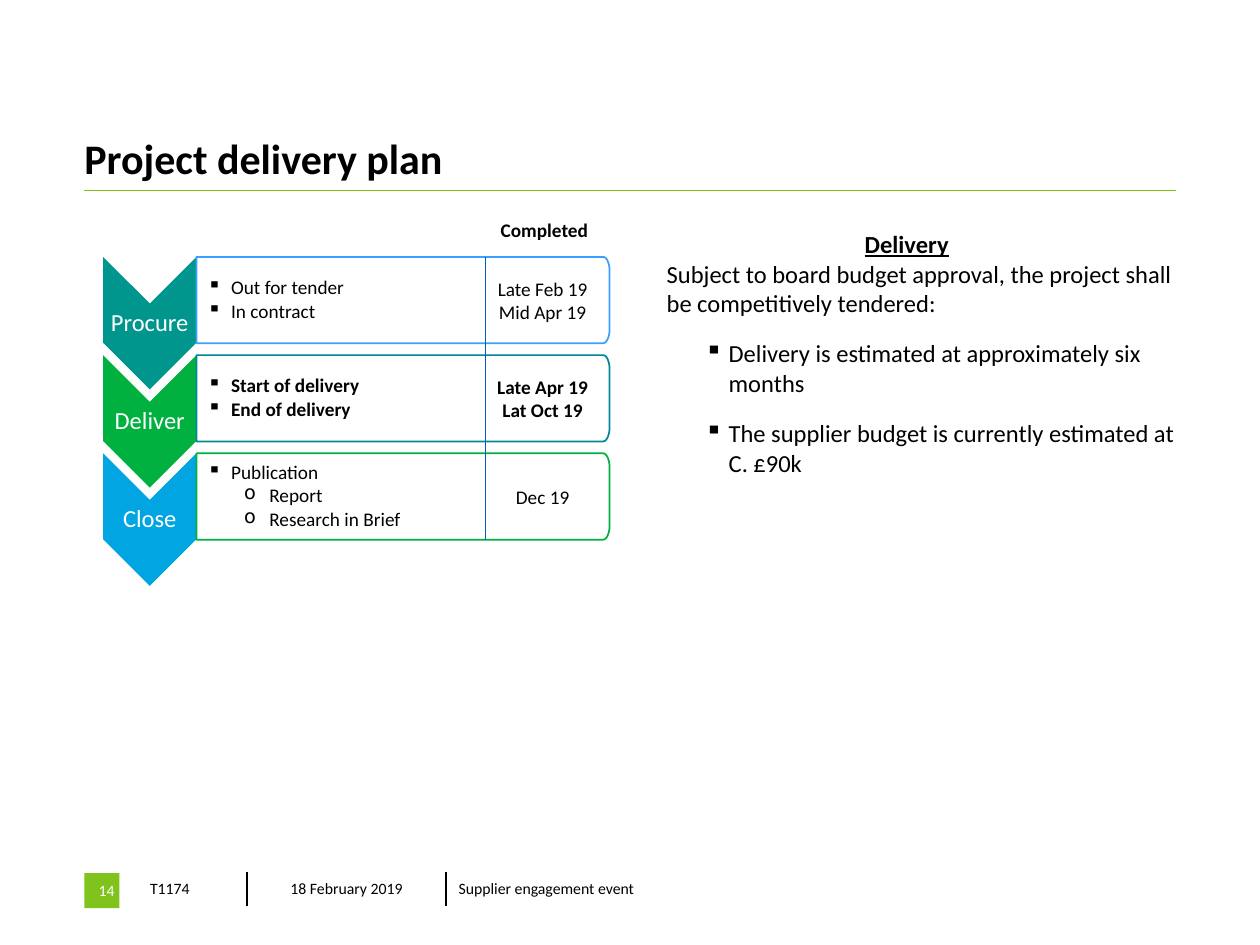
import math

from lxml import etree
from pptx import Presentation
from pptx import util as u
from pptx.dml import color
from pptx.enum import shapes, text
from pptx.oxml import ns

Cm, Pt = u.Cm, u.Pt
BLACK = color.RGBColor(0x00, 0x00, 0x00)
WHITE = color.RGBColor(0xFF, 0xFF, 0xFF)
LIME = color.RGBColor(0x7F, 0xC3, 0x1C)
GREEN = color.RGBColor(0x00, 0xB1, 0x40)
TEAL = color.RGBColor(0x00, 0x96, 0x8E)
DARK_TEAL = color.RGBColor(0x00, 0x87, 0x9B)
SKY = color.RGBColor(0x00, 0xA5, 0xE1)
BLUE = color.RGBColor(0x3B, 0x9F, 0xFF)
NAVY = color.RGBColor(0x00, 0x5E, 0xB8)

SQUARE = ("▪", 0.48, -0.48)
CIRCLE = ("o", 1.25, -0.51)
BODY_SQUARE = ("▪", 1.25, -0.48)
STAGES = [
    ("Procure", TEAL, BLUE, False,
     [("Out for tender", SQUARE), ("In contract", SQUARE)],
     ["Late Feb 19", "Mid Apr 19"]),
    ("Deliver", GREEN, DARK_TEAL, True,
     [("Start of delivery", SQUARE), ("End of delivery", SQUARE)],
     ["Late Apr 19", "Lat Oct 19"]),
    ("Close", SKY, GREEN, False,
     [("Publication", SQUARE), ("Report", CIRCLE), ("Research in Brief", CIRCLE)],
     ["Dec 19"]),
]
DELIVERY = [
    ("Delivery", ("", 3.99, 0), 0, {"bold": True, "underline": True}),
    ("Subject to board budget approval, the project shall be competitively tendered:",
     None, 12, {}),
    ("Delivery is estimated at approximately six months", BODY_SQUARE, 12, {}),
    ("The supplier budget is currently estimated at C. £90k", BODY_SQUARE, 12, {}),
]
FOOTER = [
    ("T1174", 2.21, text.PP_ALIGN.LEFT, ["R"]),
    ("18 February 2019", 4.01, text.PP_ALIGN.CENTER, ["L", "R"]),
    ("Supplier engagement event", 5.41, text.PP_ALIGN.LEFT, ["L"]),
]

STAGE_TOP, STAGE_STEP = 5.18, 1.98
CHEVRON_LEFT, CHEVRON_WIDTH, CHEVRON_HEIGHT, NOTCH = 2.08, 1.88, 2.67, 0.94
PANEL_LEFT, PANEL_WIDTH, PANEL_HEIGHT = 3.96, 8.33, 1.74
CORNER_WIDTH, CORNER_HEIGHT = 0.13, 0.29
DATE_LEFT, DATE_WIDTH = 9.76, 2.36


def apply(target, values):
    for name, value in values.items():
        setattr(target, name, value)


def set_indent(paragraph, indent):
    bullet, margin, first = indent
    properties = paragraph._p.get_or_add_pPr()
    properties.set("marL", str(Cm(margin)))
    properties.set("indent", str(Cm(first)))
    if bullet:
        etree.SubElement(properties, ns.qn("a:buChar")).set("char", bullet)


def write(paragraph, wording, size, rgb=BLACK, indent=None, style=None, **layout):
    if indent:
        set_indent(paragraph, indent)
    paragraph.text = wording
    apply(paragraph, layout)
    apply(paragraph.font, {"name": "Calibri", "size": Pt(size), **(style or {})})
    paragraph.font.color.rgb = rgb


def paragraphs(frame, items):
    for number, item in enumerate(items):
        yield (frame.add_paragraph() if number else frame.paragraphs[0]), item


def set_frame(shape, margins, anchor=text.MSO_ANCHOR.MIDDLE, wrap=True):
    frame = shape.text_frame
    sides = ("margin_left", "margin_top", "margin_right", "margin_bottom")
    apply(frame, {"word_wrap": wrap, "vertical_anchor": anchor,
                  **{side: Cm(value) for side, value in zip(sides, margins)}})
    return frame


def add_text(slide, box, anchor, wrap=True):
    shape = slide.shapes.add_textbox(*map(Cm, box))
    return set_frame(shape, (0, 0, 0, 0), anchor, wrap)


def paint(shape, fill, line=None):
    shape.shadow.inherit = False
    shape.fill.solid()
    shape.fill.fore_color.rgb = fill
    if line is None:
        shape.line.fill.background()
    else:
        shape.line.color.rgb = line
        shape.line.width = Pt(1)


def add_outline(slide, points):
    corners = [(Cm(x), Cm(y)) for x, y in points]
    builder = slide.shapes.build_freeform(*corners[0])
    builder.add_line_segments(corners[1:], close=True)
    return builder.convert_to_shape()


def add_rule(slide, start, end, rgb, width):
    line = slide.shapes.add_connector(shapes.MSO_CONNECTOR.STRAIGHT,
                                      *map(Cm, start + end))
    line.line.color.rgb = rgb
    line.line.width = Pt(width)
    etree.SubElement(line._element.spPr, ns.qn("a:effectLst"))


def chevron_points(top):
    left, right = CHEVRON_LEFT, CHEVRON_LEFT + CHEVRON_WIDTH
    middle, bottom = left + CHEVRON_WIDTH / 2, top + CHEVRON_HEIGHT
    return [(right, top), (right, bottom - NOTCH), (middle, bottom),
            (left, bottom - NOTCH), (left, top), (middle, top + NOTCH)]


def panel_points(top):
    x = PANEL_LEFT + PANEL_WIDTH - CORNER_WIDTH
    upper, lower = top + CORNER_HEIGHT, top + PANEL_HEIGHT - CORNER_HEIGHT
    angles = [math.radians(degrees) for degrees in range(0, 91, 10)]
    arc = [(x + CORNER_WIDTH * math.sin(a), CORNER_HEIGHT * math.cos(a)) for a in angles]
    return ([(PANEL_LEFT, top)] + [(px, upper - dy) for px, dy in arc]
            + [(px, lower + dy) for px, dy in reversed(arc)]
            + [(PANEL_LEFT, top + PANEL_HEIGHT)])


def add_stage(slide, top, stage):
    name, fill, outline, bold, tasks, dates = stage
    chevron = add_outline(slide, chevron_points(top))
    paint(chevron, fill)
    frame = set_frame(chevron, (0.03, NOTCH, 0.03, NOTCH))
    write(frame.paragraphs[0], name, 14, WHITE,
          alignment=text.PP_ALIGN.CENTER, line_spacing=0.9)

    panel = add_outline(slide, panel_points(top))
    paint(panel, WHITE, outline)
    solid = panel._element.spPr.find(ns.qn("a:solidFill"))
    etree.SubElement(solid[0], ns.qn("a:alpha")).set("val", "90000")
    frame = set_frame(panel, (0.22, 0.1, 0.1, 0.1))
    for paragraph, (task, indent) in paragraphs(frame, tasks):
        write(paragraph, task, 11, indent=indent, style={"bold": bold},
              alignment=text.PP_ALIGN.LEFT, line_spacing=0.9, space_after=Pt(1.65))
    return top, dates, bold


def add_dates(slide, top, dates, bold):
    frame = add_text(slide, (DATE_LEFT, top, DATE_WIDTH, PANEL_HEIGHT),
                     text.MSO_ANCHOR.MIDDLE)
    for paragraph, date in paragraphs(frame, dates):
        write(paragraph, date, 11, style={"bold": bold},
              alignment=text.PP_ALIGN.CENTER)


def add_footer(slide):
    frame = slide.shapes.add_table(1, len(FOOTER), Cm(2.77), Cm(17.6), Cm(11.63), Cm(0.64))
    table = frame.table
    apply(table, {"first_row": False, "horz_banding": False})
    for number, (wording, width, alignment, borders) in enumerate(FOOTER):
        table.columns[number].width = Cm(width)
        cell = table.cell(0, number)
        apply(cell, {"vertical_anchor": text.MSO_ANCHOR.MIDDLE,
                     "margin_top": Cm(0.12), "margin_bottom": Cm(0.12)})
        write(cell.text_frame.paragraphs[0], wording, 9, alignment=alignment)
        properties = cell._tc.get_or_add_tcPr()
        for side in borders:
            border = etree.SubElement(properties, ns.qn(f"a:ln{side}"), w=str(Pt(1)))
            solid = etree.SubElement(border, ns.qn("a:solidFill"))
            etree.SubElement(solid, ns.qn("a:srgbClr"), val=str(BLACK))
        cell.fill.background()


def main():
    presentation = Presentation()
    apply(presentation, {"slide_width": Cm(25.4), "slide_height": Cm(19.05)})
    slide = presentation.slides.add_slide(presentation.slide_layouts[6])

    add_footer(slide)
    add_rule(slide, (1.7, 3.84), (23.7, 3.84), LIME, 0.6)
    title = add_text(slide, (1.7, 1.42, 22, 2.26), text.MSO_ANCHOR.BOTTOM)
    write(title.paragraphs[0], "Project delivery plan", 24, style={"bold": True})

    badge = slide.shapes.add_shape(shapes.MSO_SHAPE.RECTANGLE,
                                   *map(Cm, (1.7, 17.6, 0.71, 0.71)))
    paint(badge, LIME)
    frame = set_frame(badge, (0.1, 0.1, 0.1, 0.1))
    write(frame.paragraphs[0], "14", 9, WHITE, alignment=text.PP_ALIGN.RIGHT)

    heading = add_text(slide, (9.78, 4.27, 2.39, 0.74), text.MSO_ANCHOR.MIDDLE)
    write(heading.paragraphs[0], "Completed", 11, style={"bold": True},
          alignment=text.PP_ALIGN.CENTER)
    schedule = [add_stage(slide, STAGE_TOP + number * STAGE_STEP, stage)
                for number, stage in enumerate(STAGES)]
    bottom = STAGE_TOP + (len(STAGES) - 1) * STAGE_STEP + PANEL_HEIGHT
    add_rule(slide, (9.78, STAGE_TOP), (9.78, bottom), NAVY, 0.5)
    for entry in schedule:
        add_dates(slide, *entry)

    body = add_text(slide, (13.44, 4.62, 10.26, 11.2), text.MSO_ANCHOR.TOP)
    for paragraph, (wording, indent, after, style) in paragraphs(body, DELIVERY):
        write(paragraph, wording, 14, indent=indent, style=style, space_after=Pt(after))
    presentation.save("out.pptx")


if __name__ == "__main__":
    main()
